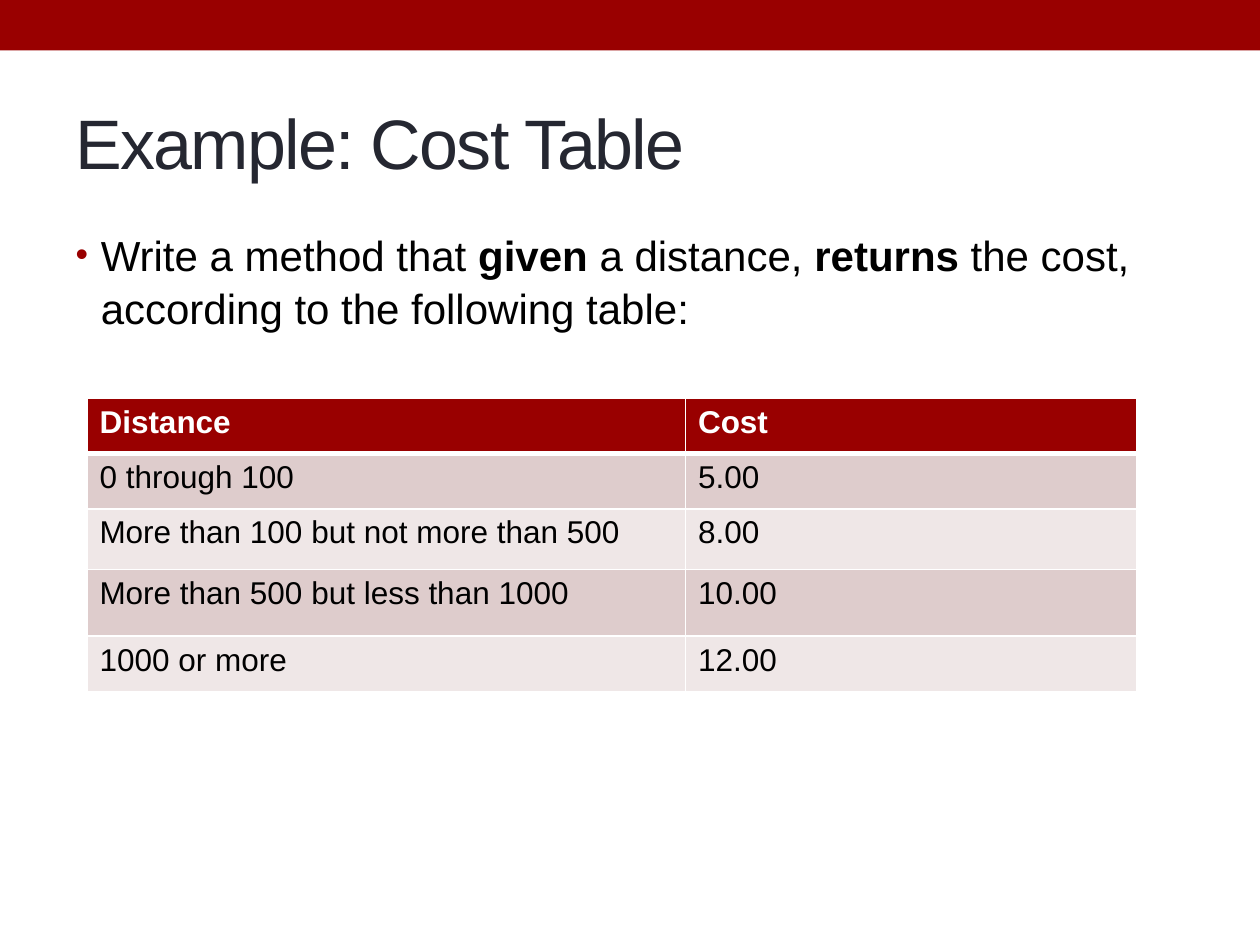
"""Build a slide with a cost table for a method-writing exercise."""
from lxml.etree import SubElement
from pptx import Presentation
from pptx.dml.color import RGBColor
from pptx.enum.shapes import MSO_SHAPE as Shape
from pptx.enum.text import MSO_ANCHOR as Anchor, MSO_AUTO_SIZE as AutoSize, PP_ALIGN as Align
from pptx.oxml.ns import qn
from pptx.util import Inches, Pt

RED, SLATE, BLACK, WHITE = "990000", "252731", "000000", "FFFFFF"
BANDS = ["EFE7E7", "DECCCC"]


def paint(target, color):
    target.solid()
    target.fore_color.rgb = RGBColor.from_string(color)


def write(para, text, size, color, bold=False):
    span = para.add_run()
    span.text = text
    paint(span.font.fill, color)
    for name, value in {"name": "Arial", "size": Pt(size), "bold": bold}.items():
        setattr(span.font, name, value)
    return span


deck = Presentation()
deck.slide_width, deck.slide_height = Inches(10), Inches(7.5)
page = deck.slides.add_slide(deck.slide_layouts[1])
title, body = page.placeholders

bar = page.shapes.add_shape(Shape.RECTANGLE, 0, 0, deck.slide_width, Inches(0.4))
bar.shadow.inherit = False
paint(bar.fill, RED)
bar.line.fill.background()

for box, top, height, anchor in [
    (title, 0.58, 1.08, Anchor.MIDDLE),
    (body, 1.75, 5.33, Anchor.TOP),
]:
    place = {"left": 0.5, "top": top, "width": 9, "height": height}
    for name, value in place.items():
        setattr(box, name, Inches(value))
    frame = box.text_frame
    frame.auto_size, frame.vertical_anchor, frame.word_wrap = AutoSize.NONE, anchor, True
    frame.paragraphs[0].alignment = Align.LEFT

heading = write(title.text_frame.paragraphs[0], "Example: Cost Table", 40, SLATE)
heading.font._element.set("spc", "-100")

task = body.text_frame.paragraphs[0]
task.space_before, task.line_spacing = Pt(4.8), 1.05
bullet = task._p.get_or_add_pPr()
bullet.set("marL", str(Inches(0.2)))
bullet.set("indent", str(-Inches(0.2)))
SubElement(SubElement(bullet, qn("a:buClr")), qn("a:srgbClr"), val=RED)
SubElement(bullet, qn("a:buSzPct"), val="85000")
SubElement(bullet, qn("a:buFont"), typeface="Arial")
SubElement(bullet, qn("a:buChar"), char="•")
for text, bold in [
    ("Write a method that ", False),
    ("given", True),
    (" a distance, ", False),
    ("returns", True),
    (" the cost, according to the following table:", False),
]:
    write(task, text, 24, BLACK, bold)

costs = [
    ("Distance", "Cost"),
    ("0 through 100", "5.00"),
    ("More than 100 but not more than 500", "8.00"),
    ("More than 500 but less than 1000", "10.00"),
    ("1000 or more", "12.00"),
]
widths, heights = [4.75, 3.58], [0.44, 0.44, 0.48, 0.53, 0.44]
table = page.shapes.add_table(
    len(heights), len(widths), Inches(0.69), Inches(3.16),
    Inches(sum(widths)), Inches(sum(heights)),
).table
for column, width in zip(table.columns, widths):
    column.width = Inches(width)
for index, (row, height, texts) in enumerate(zip(table.rows, heights, costs)):
    row.height = Inches(height)
    header = index == 0
    for cell, text in zip(row.cells, texts):
        write(cell.text_frame.paragraphs[0], text, 18, WHITE if header else BLACK, header)
        borders = {
            "lnL": 1, "lnR": 1,
            "lnT": 3 if index == 1 else 1,
            "lnB": 3 if header else 1,
        }
        for side, weight in borders.items():
            edge = SubElement(cell._tc.get_or_add_tcPr(), qn(f"a:{side}"), w=str(Pt(weight)))
            SubElement(SubElement(edge, qn("a:solidFill")), qn("a:srgbClr"), val=WHITE)
        paint(cell.fill, RED if header else BANDS[index % 2])

deck.save("out.pptx")
